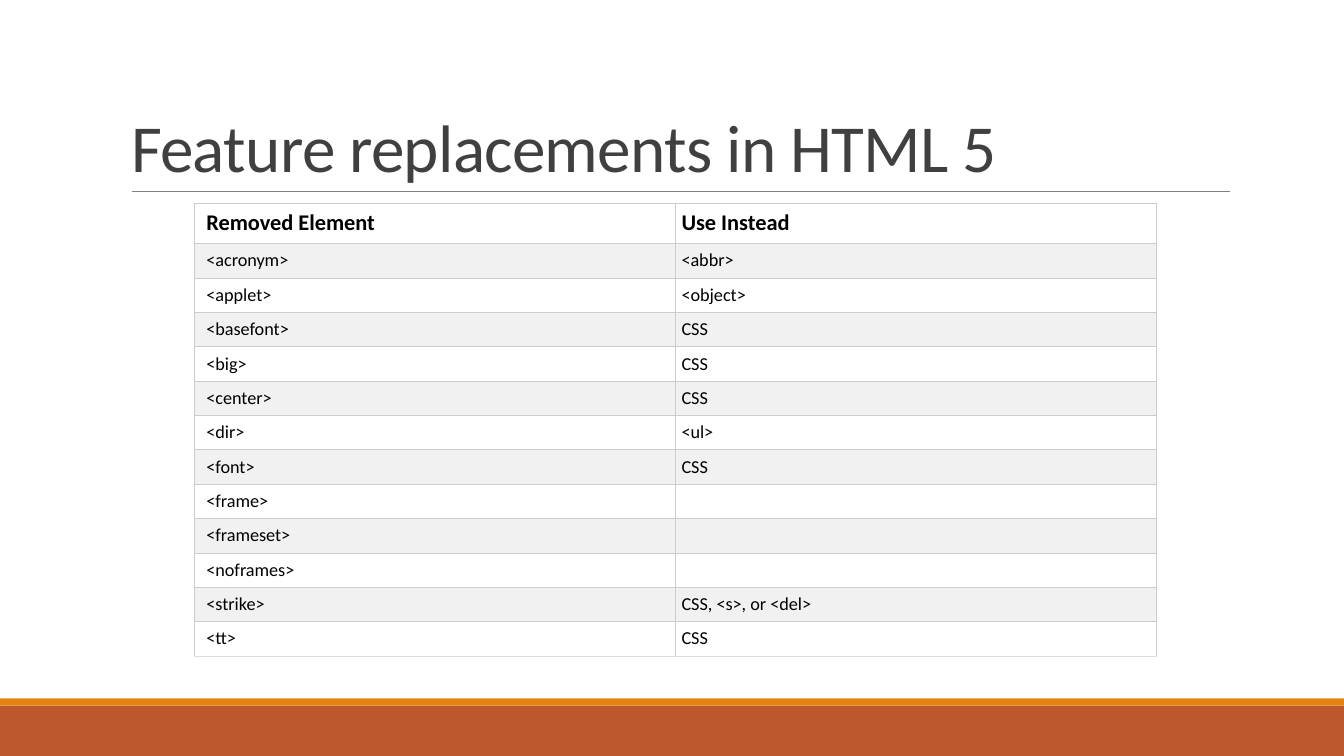
from lxml import etree
from pptx import Presentation
from pptx import util as u
from pptx.dml.color import RGBColor
from pptx.enum import shapes, text
from pptx.oxml.ns import qn

FONT = "Calibri"
REPLACEMENTS = [
    ("Removed Element", "Use Instead"),
    ("<acronym>", "<abbr>"),
    ("<applet>", "<object>"),
    ("<basefont>", "CSS"),
    ("<big>", "CSS"),
    ("<center>", "CSS"),
    ("<dir>", "<ul>"),
    ("<font>", "CSS"),
    ("<frame>", ""),
    ("<frameset>", ""),
    ("<noframes>", ""),
    ("<strike>", "CSS, <s>, or <del>"),
    ("<tt>", "CSS"),
]


def color(value):
    """Turn a hex string into a colour."""
    return RGBColor.from_string(value)


def add_text(paragraph, words, size, fill, bold=False):
    """Add one formatted run and return it."""
    run = paragraph.add_run()
    run.text = words
    run.font.name = FONT
    run.font.size = u.Pt(size)
    run.font.bold = bold
    run.font.color.rgb = color(fill)
    return run


def add_bar(slide, left, top, width, height, fill):
    """Add a plain filled rectangle."""
    shape = slide.shapes.add_shape(shapes.MSO_SHAPE.RECTANGLE, left, top, width, height)
    shape.shadow.inherit = False
    shape.fill.solid()
    shape.fill.fore_color.rgb = color(fill)
    shape.line.fill.background()


def add_footer(slide, left, top, width, height):
    """Draw the two-tone band along the bottom of its box."""
    stripe = u.Cm(0.18)
    add_bar(slide, left, top + stripe, width, height - stripe, "BD582C")
    add_bar(slide, left, top, width, stripe, "E48312")


def add_title(slide, left, top, width, height, words):
    """Place the title with a thin rule along its bottom edge."""
    rule = slide.shapes.add_connector(
        shapes.MSO_CONNECTOR.STRAIGHT,
        left + u.Cm(0.27), top + height, left + width, top + height,
    )
    rule.line.color.rgb = color("808080")
    rule.line.width = u.Pt(0.5)
    etree.SubElement(rule._element.spPr, qn("a:effectLst"))

    title = slide.shapes.title
    title.left, title.top, title.width, title.height = left, top, width, height
    frame = title.text_frame
    frame.auto_size = text.MSO_AUTO_SIZE.NONE
    frame.word_wrap = True
    frame.vertical_anchor = text.MSO_ANCHOR.BOTTOM
    paragraph = frame.paragraphs[0]
    paragraph.alignment = text.PP_ALIGN.LEFT
    paragraph.line_spacing = 0.85
    run = add_text(paragraph, words, 48, "404040")
    run.font._element.set("spc", "-50")


def add_borders(cell, bottom):
    """Line all four sides of a cell."""
    properties = cell._tc.get_or_add_tcPr()
    for side in "LRTB":
        line = etree.SubElement(properties, qn(f"a:ln{side}"), w=str(u.Pt(0.75)))
        fill = etree.SubElement(line, qn("a:solidFill"))
        etree.SubElement(fill, qn("a:srgbClr"), val=bottom if side == "B" else "CCCCCC")


def format_cell(cell, words, row, column):
    """Fill, line and write one table cell."""
    last = row == len(REPLACEMENTS) - 1
    add_borders(cell, "DDDDDD" if last else "CCCCCC")
    cell.fill.solid()
    cell.fill.fore_color.rgb = color("F1F1F1" if row % 2 else "FFFFFF")
    cell.margin_left = u.Cm(0.15 if column else 0.3)
    cell.margin_right = cell.margin_top = cell.margin_bottom = u.Cm(0.15)
    paragraph = cell.text_frame.paragraphs[0]
    if words:
        add_text(paragraph, words, 13 if row else 16, "000000", bold=row == 0)
    else:
        paragraph._p.get_or_add_endParaRPr().set("sz", "1300")


def add_replacements(slide, left, top, width, height):
    """Fill the box with the table of removed elements."""
    header_height = u.Cm(1.01)
    row_height = (height - header_height) // (len(REPLACEMENTS) - 1)
    table = slide.shapes.add_table(len(REPLACEMENTS), 2, left, top, width, height).table
    for row, entries in enumerate(REPLACEMENTS):
        table.rows[row].height = row_height if row else header_height
        for column, words in enumerate(entries):
            format_cell(table.cell(row, column), words, row, column)


def main():
    """Build and save the slide."""
    presentation = Presentation()
    presentation.slide_width = u.Cm(33.87)
    presentation.slide_height = u.Cm(19.05)
    slide = presentation.slides.add_slide(presentation.slide_layouts[5])
    add_footer(slide, 0, u.Cm(17.6), presentation.slide_width, u.Cm(1.45))
    add_title(slide, u.Cm(3.05), u.Cm(0.79), u.Cm(27.95), u.Cm(4.03),
              "Feature replacements in HTML 5")
    add_replacements(slide, u.Cm(4.9), u.Cm(5.13), u.Cm(24.25), u.Cm(11.41))
    presentation.save("out.pptx")


if __name__ == "__main__":
    main()
